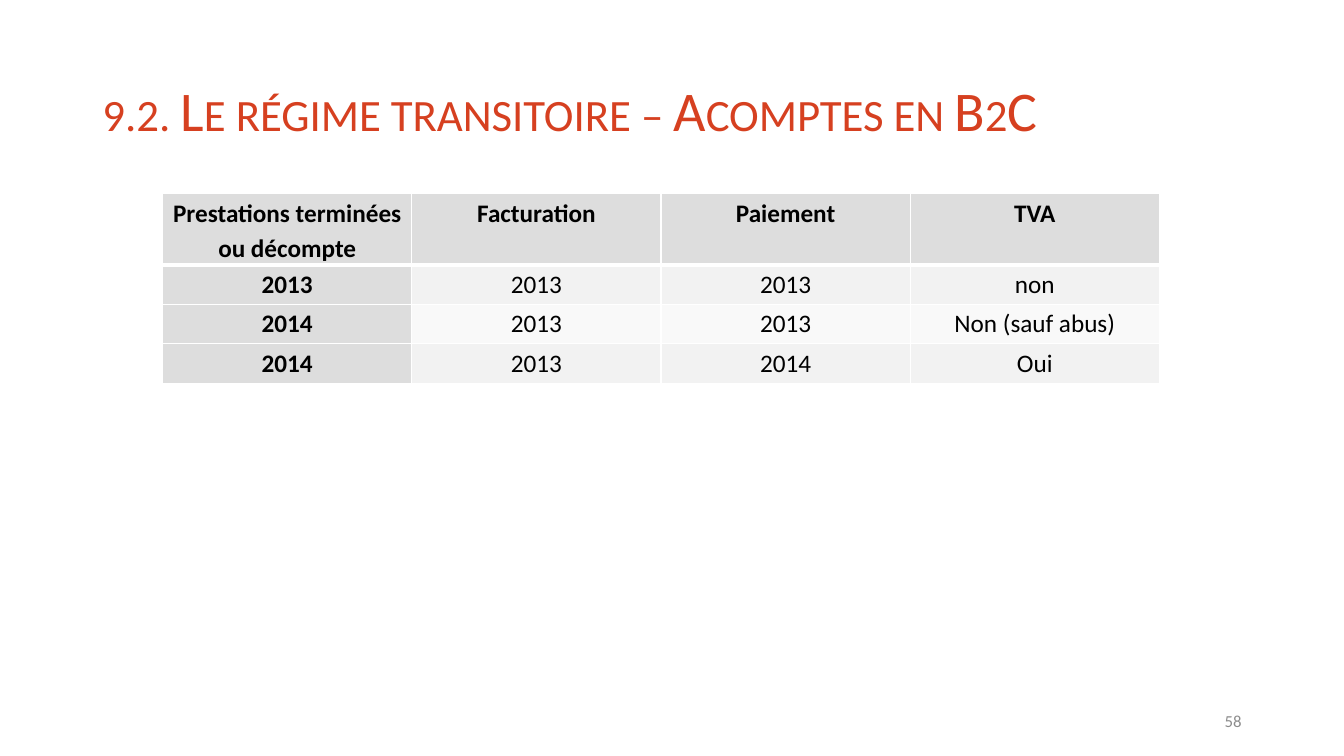
"""Build the slide on the transitional VAT regime for B2C advance payments."""
from dataclasses import dataclass

from lxml import etree
from pptx import Presentation
from pptx import util as u
from pptx.dml.color import RGBColor
from pptx.enum import text
from pptx.oxml import ns

COLORS = {
    "title": "D64020",
    "number": "8C8C8C",
    "text": "000000",
    "head": "DDDDDD",
    "odd": "F2F2F2",
    "even": "F9F9F9",
    "border": "FFFFFF",
}
FONT = "Calibri"
COLUMN_WIDTH = 178


@dataclass
class Row:
    """One table row with its height and border widths in points."""

    cells: tuple[str, ...]
    fill: str
    height: float = 28.3
    top: float = 1
    bottom: float = 1
    head: bool = False


ROWS = [
    Row(("Prestations terminées ou décompte", "Facturation", "Paiement", "TVA"),
        "head", height=50.5, bottom=3, head=True),
    Row(("2013", "2013", "2013", "non"), "odd", top=3),
    Row(("2014", "2013", "2013", "Non (sauf abus)"), "even"),
    Row(("2014", "2013", "2014", "Oui"), "odd"),
]


def format_paragraph(p, size: float, color: str, align, bold: bool = False,
                     spacing: float = 1.0) -> None:
    """Set the font, alignment and line spacing of a paragraph."""
    p.alignment = align
    p.line_spacing = spacing
    p.font.name = FONT
    p.font.size = u.Pt(size)
    p.font.bold = bold
    p.font.color.rgb = RGBColor.from_string(COLORS[color])


def place(sp, left: float, top: float, width: float, height: float) -> None:
    """Move and size a shape."""
    sp.left, sp.top = u.Pt(left), u.Pt(top)
    sp.width, sp.height = u.Pt(width), u.Pt(height)


def add_borders(cell, row: Row) -> None:
    """Draw the four borders of a cell."""
    tc_pr = cell._tc.get_or_add_tcPr()
    for side, width in {"L": 1, "R": 1, "T": row.top, "B": row.bottom}.items():
        ln = etree.SubElement(tc_pr, ns.qn(f"a:ln{side}"), w=str(u.Pt(width)))
        fill = etree.SubElement(ln, ns.qn("a:solidFill"))
        etree.SubElement(fill, ns.qn("a:srgbClr"), val=COLORS["border"])


def fill_cell(cell, row: Row, label: str, head: bool) -> None:
    """Write and format one table cell."""
    cell.text = label
    cell.margin_left = cell.margin_right = u.Pt(5)
    cell.margin_top = cell.margin_bottom = 0
    add_borders(cell, row)
    cell.fill.solid()
    color = COLORS["head" if head else row.fill]
    cell.fill.fore_color.rgb = RGBColor.from_string(color)
    format_paragraph(cell.text_frame.paragraphs[0], 18, "text",
                     text.PP_ALIGN.CENTER, head, 1.15)


def add_title(s) -> None:
    """Fill the title placeholder in small capitals."""
    sp = s.shapes.title
    place(sp, 66, 28.8, 828, 104.4)
    tf = sp.text_frame
    tf.text = "9.2. Le régime transitoire – Acomptes en B2C"
    tf.vertical_anchor = text.MSO_ANCHOR.MIDDLE
    p = tf.paragraphs[0]
    format_paragraph(p, 40, "title", text.PP_ALIGN.LEFT, spacing=0.9)
    p.runs[0].font._element.set("cap", "small")


def add_table(s) -> None:
    """Add the table of services, invoicing, payment and VAT."""
    columns = len(ROWS[0].cells)
    table = s.shapes.add_table(
        len(ROWS), columns, u.Pt(116.2), u.Pt(138.5),
        u.Pt(COLUMN_WIDTH * columns), u.Pt(sum(row.height for row in ROWS))).table
    for column in table.columns:
        column.width = u.Pt(COLUMN_WIDTH)
    for i, row in enumerate(ROWS):
        table.rows[i].height = u.Pt(row.height)
        for j, label in enumerate(row.cells):
            fill_cell(table.cell(i, j), row, label, row.head or j == 0)


def add_slide_number(s) -> None:
    """Add the slide number at the lower right."""
    sp = s.shapes.add_textbox(0, 0, 0, 0)
    place(sp, 678, 500.4, 216, 28.8)
    tf = sp.text_frame
    tf.word_wrap = True
    tf.vertical_anchor = text.MSO_ANCHOR.MIDDLE
    tf.text = "58"
    format_paragraph(tf.paragraphs[0], 12, "number", text.PP_ALIGN.RIGHT)


def main() -> None:
    """Build and save the presentation."""
    prs = Presentation()
    prs.slide_width, prs.slide_height = u.Pt(960), u.Pt(540)
    s = prs.slides.add_slide(prs.slide_layouts[5])
    add_title(s)
    add_table(s)
    add_slide_number(s)
    prs.save("out.pptx")


if __name__ == "__main__":
    main()
